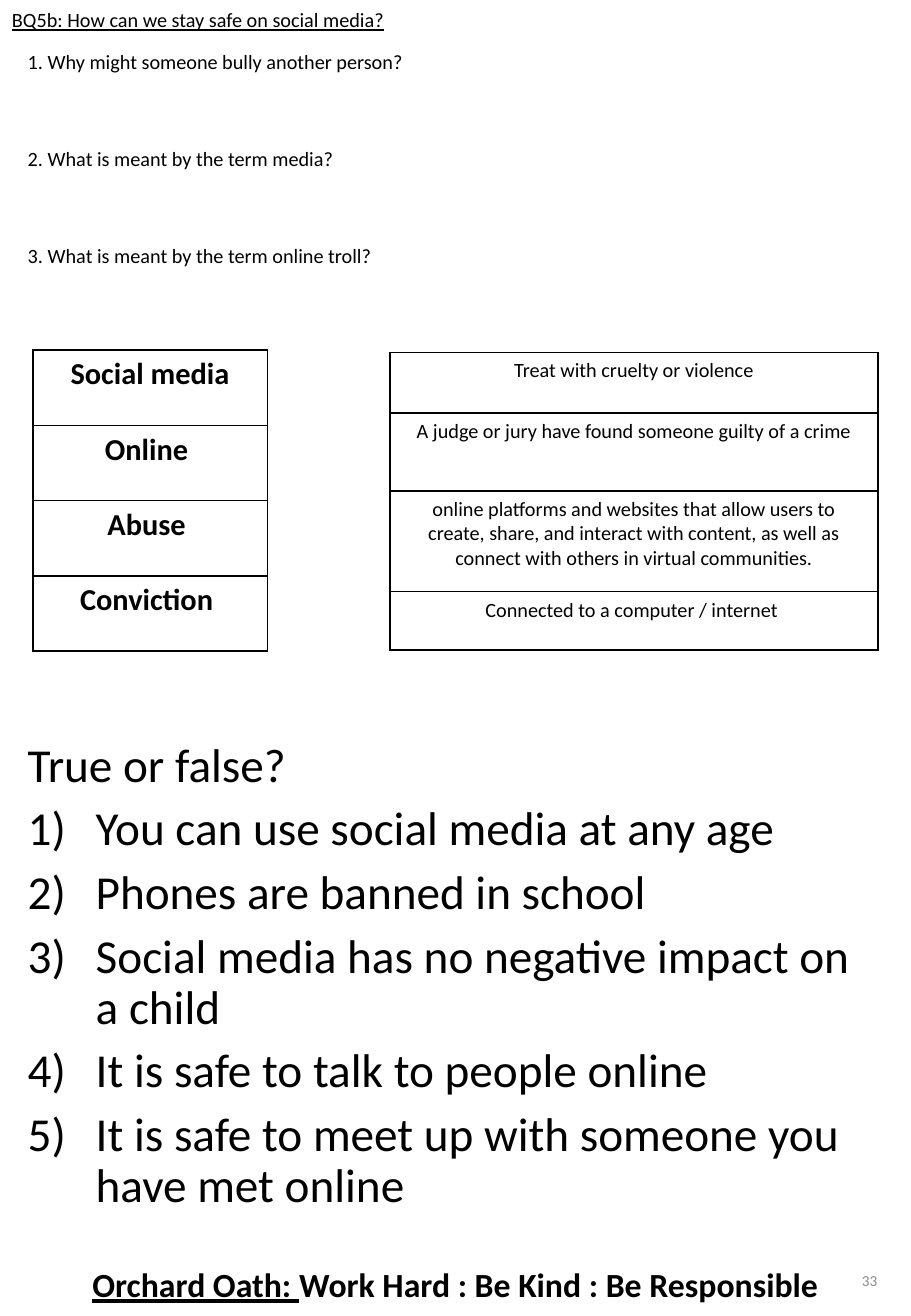
from lxml.etree import SubElement
from pptx import Presentation
from pptx.dml.color import RGBColor
from pptx.enum.text import MSO_ANCHOR, PP_ALIGN
from pptx.oxml.ns import qn
from pptx.util import Inches, Pt

ASKS = ["1. Why might someone bully another person?",
        "2. What is meant by the term media?",
        "3. What is meant by the term online troll?"]
TERMS = ["Social media", "Online ", "Abuse ", "Conviction "]
MEANS = ["Treat with cruelty or violence",
         "A judge or jury have found someone guilty of a crime",
         "online platforms and websites that allow users to create, share, and "
         "interact with content, as well as connect with others in virtual communities.",
         "Connected to a computer / internet "]
CLAIMS = ["You can use social media at any age",
          "Phones are banned in school",
          "Social media has no negative impact on a child",
          "It is safe to talk to people online",
          "It is safe to meet up with someone you have met online"]


def paint(color, value):
    """Set a colour from a hex string."""
    color.rgb = RGBColor.from_string(value)


def style(run, size, bold=False, line=False, color="000000"):
    """Format one run."""
    font = run.font
    font.name, font.size = "Calibri", Pt(size)
    font.bold, font.underline = bold, line
    paint(font.color, color)


def write(slide, box, lines, size, gap=0, **look):
    """Place a wrapped text box with one paragraph per line and return its frame."""
    frame = slide.shapes.add_textbox(*map(Inches, box)).text_frame
    frame.word_wrap = True
    frame.text = "\n".join(lines)
    for i, para in enumerate(frame.paragraphs):
        if i:
            para.space_before = Pt(gap)
        style(para.runs[0], size, **look)
    return frame


def edge(cell):
    """Draw thin black borders around a cell."""
    props = cell._tc.get_or_add_tcPr()
    for side in "LRTB":
        line = SubElement(props, qn("a:ln" + side), w=str(Pt(1)))
        fill = SubElement(line, qn("a:solidFill"))
        SubElement(fill, qn("a:srgbClr"), val="000000")


def grid(slide, box, rows, words, size, bold=False):
    """Place a one-column table of centred words."""
    table = slide.shapes.add_table(len(words), 1, *map(Inches, box)).table
    table.first_row = table.horz_banding = False
    for i, (tall, word) in enumerate(zip(rows, words)):
        table.rows[i].height = Inches(tall)
        cell = table.cell(i, 0)
        edge(cell)
        cell.fill.background()
        cell.text_frame.text = word
        para = cell.text_frame.paragraphs[0]
        para.alignment = PP_ALIGN.CENTER
        style(para.runs[0], size, bold)


def quiz(slide, box):
    """Place the true or false list with numbered claims."""
    frame = write(slide, box, ["True or false?"] + CLAIMS, 28, gap=7.5)
    for i, para in enumerate(frame.paragraphs):
        para.line_spacing = 0.9
        if i:
            props = para._p.get_or_add_pPr()
            props.set("marL", str(Inches(0.56)))
            props.set("indent", str(-Inches(0.56)))
            SubElement(props, qn("a:buAutoNum"), type="arabicParenR")


def foot(slide, box):
    """Place the oath and the page number along the bottom."""
    left, top, width, height = box
    para = write(slide, box, ["Orchard Oath: "], 20, bold=True, line=True).paragraphs[0]
    para.alignment, para.line_spacing = PP_ALIGN.CENTER, 0.9
    run = para.add_run()
    run.text = "Work Hard : Be Kind : Be Responsible"
    style(run, 20, bold=True)
    spot = (left + width - 1.87, top - 0.14, 1.69, height + 0.14)
    frame = write(slide, spot, ["33"], 9, color="8C8C8C")
    frame.vertical_anchor = MSO_ANCHOR.MIDDLE
    frame.paragraphs[0].alignment = PP_ALIGN.RIGHT


def main():
    """Build the worksheet and save it."""
    deck = Presentation()
    deck.slide_width, deck.slide_height = Inches(7.5), Inches(10.83)
    slide = deck.slides.add_slide(deck.slide_layouts[6])
    foot(slide, (0, 10.39, 7.5, 0.44))
    write(slide, (0, 0.01, 7.35, 0.3),
          ["BQ5b: How can we stay safe on social media?"], 12, line=True)
    asks = write(slide, (0.13, 0.31, 7.25, 2.26), ASKS, 12, gap=43)
    asks.margin_top = Inches(0.1)
    grid(slide, (0.27, 2.88, 1.93, 2.49), [0.62] * 4, TERMS, 18, bold=True)
    grid(slide, (3.21, 2.9, 4.02, 2.45), [0.5, 0.64, 0.83, 0.48], MEANS, 12)
    quiz(slide, (0.13, 6.05, 7.19, 4.15))
    deck.save("out.pptx")


if __name__ == "__main__":
    main()
